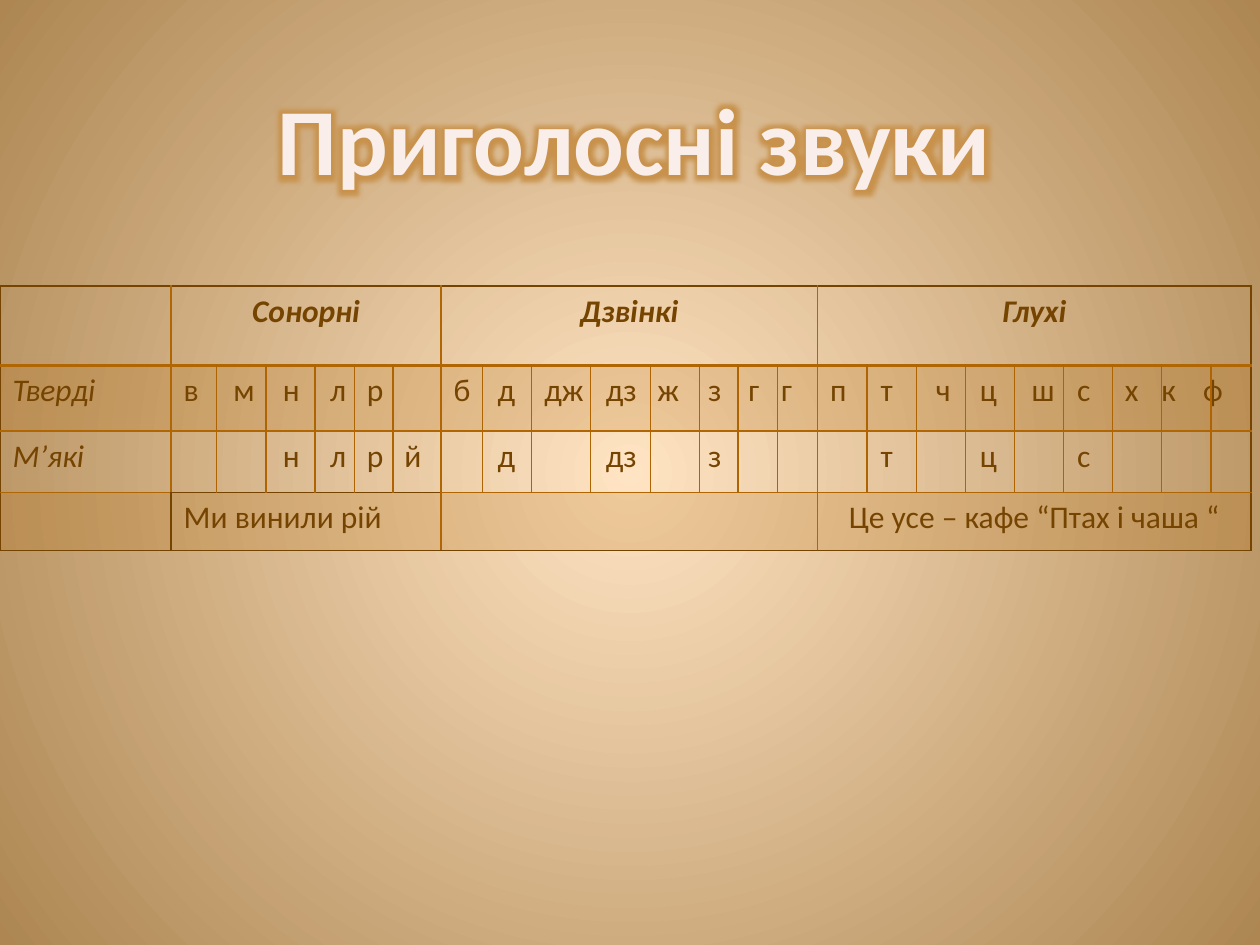
import pptx
import pptx.dml.color
import pptx.enum.shapes
import pptx.enum.text
import pptx.oxml
import pptx.oxml.ns
import pptx.util

Cm = pptx.util.Cm
Pt = pptx.util.Pt
RGBColor = pptx.dml.color.RGBColor
PP_ALIGN = pptx.enum.text.PP_ALIGN
qn = pptx.oxml.ns.qn

CENTRE_LIGHT = RGBColor(0xFF, 0xE4, 0xC3)
EDGE_TAN = RGBColor(0xAD, 0x86, 0x52)
TITLE_PALE = RGBColor(0xF9, 0xEE, 0xEA)
TITLE_OUTLINE = RGBColor(0x84, 0x4C, 0x00)
TITLE_GLOW = RGBColor(0xC8, 0x92, 0x4C)
DARK_BROWN = RGBColor(0x75, 0x44, 0x01)
ORANGE_BROWN = RGBColor(0xB0, 0x66, 0x02)
DIVIDER_BROWN = RGBColor(0xAE, 0x64, 0x00)

FONT = "Calibri"
COLUMN_WIDTHS = [3.45, 5.44, 7.59, 8.74]
ROW_HEIGHTS = [1.6, 1.32, 1.24, 1.17]
ROWS = [
    ["", "Сонорні", "Дзвінкі", "Глухі"],
    ["Тверді", "в\tм\tн\tл\tр", "б\tд\tдж\tдз\tж\tз\tг\tг",
     "п\tт\tч\tц\tш\tс\tх\tк\tф"],
    ["М’які", "\t\tн\tл\tр\tй", "\tд\t\tдз\t\tз", "\tт\t\tц\t\tс"],
    ["", "Ми винили рій", "", "Це усе – кафе “Птах і чаша “"],
]
LETTER_TABS = {
    1: [1.0, 2.0, 2.95, 3.69, 4.45],
    2: [0.89, 1.83, 3.07, 4.11, 5.13, 5.94, 6.6],
    3: [1.02, 2.13, 3.02, 4.06, 4.98, 5.94, 6.68, 7.52],
}
DIVIDERS = [4.37, 5.36, 6.35, 7.14, 7.92,
            9.73, 10.72, 11.91, 13.11, 14.1, 14.88, 15.67]
DIVIDERS += [17.48 + 0.99 * step for step in range(8)]


def xml(text):
    """Parse a DrawingML fragment whose root tag carries the a: prefix."""
    tag_end = min(text.index(mark) for mark in " />" if mark in text)
    return pptx.oxml.parse_xml(
        text[:tag_end] + " " + pptx.oxml.ns.nsdecls("a") + text[tag_end:])


def set_background(page):
    fill = page.background.fill
    fill.gradient()
    for stop, color in zip(fill.gradient_stops, (CENTRE_LIGHT, EDGE_TAN)):
        stop.color.rgb = color
    gradient = page.element.find(".//" + qn("a:gradFill"))
    linear = gradient.find(qn("a:lin"))
    gradient.replace(linear, xml(
        '<a:path path="circle"><a:fillToRect l="50000" t="50000" '
        'r="50000" b="50000"/></a:path>'))


def style_font(font, size, color, bold=False, italic=False):
    font.name = FONT
    font.size = Pt(size)
    font.color.rgb = color
    font.bold = bold
    font.italic = italic


def add_title(page):
    box = page.shapes.add_textbox(Cm(1.78), Cm(1.19), Cm(22.02), Cm(3.18))
    frame = box.text_frame
    frame.word_wrap = True
    frame.vertical_anchor = pptx.enum.text.MSO_ANCHOR.MIDDLE
    frame.text = "Приголосні звуки"
    para = frame.paragraphs[0]
    para.alignment = PP_ALIGN.CENTER
    span = para.runs[0]
    style_font(span.font, 54, TITLE_PALE, bold=True)
    properties = span.font.fill._xPr
    stops = "".join(
        f'<a:gs pos="{place}"><a:srgbClr val="{TITLE_OUTLINE}"/></a:gs>'
        for place in (0, 100000))
    properties.insert(0, xml(
        f'<a:ln w="{Pt(2.48)}"><a:gradFill><a:gsLst>{stops}</a:gsLst>'
        '<a:lin ang="5400000"/></a:gradFill></a:ln>'))
    properties.find(qn("a:solidFill")).addnext(xml(
        f'<a:effectLst><a:glow rad="{Pt(10)}"><a:srgbClr val="{TITLE_GLOW}"/>'
        '</a:glow></a:effectLst>'))


def border_cell(cell, row, column):
    """Dark lines round the table and the sonorant phrase, orange inside."""
    last_row, last_column = len(ROWS) - 1, len(COLUMN_WIDTHS) - 1
    phrase = (row, column) == (last_row, 1)
    dark = {
        "L": column == 0 or phrase,
        "R": column == last_column or phrase or (row, column) == (last_row, 0),
        "T": row == 0 or phrase,
        "B": row == last_row or (row, column) == (last_row - 1, 1),
    }
    properties = cell._tc.get_or_add_tcPr()
    for side, is_dark in dark.items():
        width = Pt(2 if row == 0 and side == "B" else 1)
        color = DARK_BROWN if is_dark else ORANGE_BROWN
        properties.append(xml(
            f'<a:ln{side} w="{width}"><a:solidFill><a:srgbClr val="{color}"/>'
            f'</a:solidFill></a:ln{side}>'))


def fill_cell(cell, tinted):
    if not tinted:
        cell.fill.background()
        return
    cell.fill.solid()
    cell.fill.fore_color.rgb = ORANGE_BROWN
    color = cell._tc.tcPr.find(qn("a:solidFill")).find(qn("a:srgbClr"))
    color.append(xml('<a:alpha val="20000"/>'))


def add_tabs(para, places):
    stops = "".join(f'<a:tab pos="{Cm(place)}" algn="l"/>' for place in places)
    para._p.get_or_add_pPr().append(xml(f"<a:tabLst>{stops}</a:tabLst>"))


def write_cell(cell, text, row, column):
    para = cell.text_frame.paragraphs[0]
    if "\t" in text:
        add_tabs(para, LETTER_TABS[column])
    para.text = text
    if row == 0 or (row, column) == (3, 3):
        para.alignment = PP_ALIGN.CENTER
    for span in para.runs:
        style_font(span.font, 18, DARK_BROWN, bold=row == 0,
                   italic=row == 0 or column == 0)


def add_sound_table(page):
    table = page.shapes.add_table(
        len(ROWS), len(COLUMN_WIDTHS), Cm(0), Cm(5.77),
        Cm(sum(COLUMN_WIDTHS)), Cm(sum(ROW_HEIGHTS))).table
    table.first_row = False
    table.horz_banding = False
    for column, width in zip(table.columns, COLUMN_WIDTHS):
        column.width = Cm(width)
    for row, height in zip(table.rows, ROW_HEIGHTS):
        row.height = Cm(height)
    for row, texts in enumerate(ROWS):
        for column, text in enumerate(texts):
            cell = table.cell(row, column)
            border_cell(cell, row, column)
            fill_cell(cell, tinted=row in (1, 3))
            write_cell(cell, text, row, column)


def add_divider(page, x):
    line = page.shapes.add_connector(
        pptx.enum.shapes.MSO_CONNECTOR.STRAIGHT,
        Cm(x), Cm(7.34), Cm(x), Cm(9.93))
    line.line.color.rgb = DIVIDER_BROWN
    line.line.width = Pt(0.75)
    line._element.spPr.append(xml("<a:effectLst/>"))


def main():
    deck = pptx.Presentation()
    deck.slide_width = Cm(25.4)
    deck.slide_height = Cm(19.05)
    page = deck.slides.add_slide(deck.slide_layouts[6])
    set_background(page)
    add_title(page)
    add_sound_table(page)
    for x in DIVIDERS:
        add_divider(page, x)
    deck.save("out.pptx")


if __name__ == "__main__":
    main()
